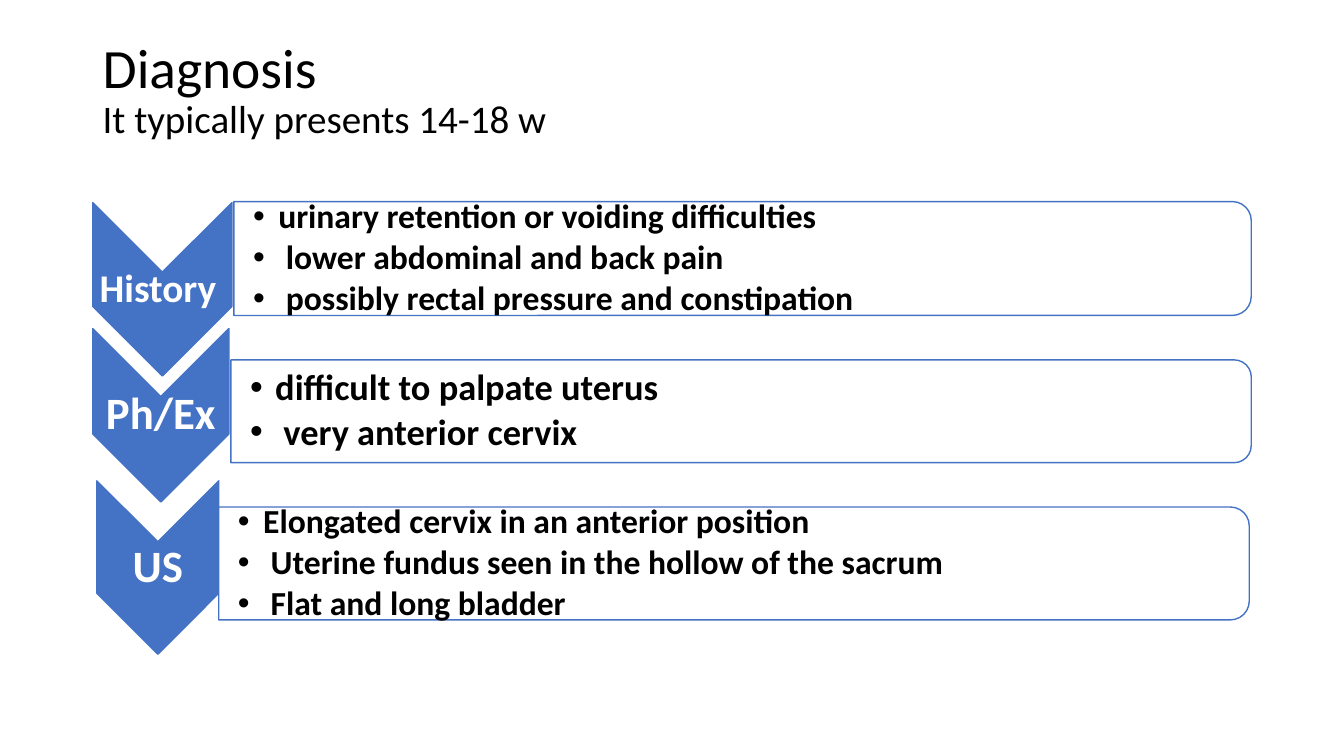
import pptx
import pptx.util
import pptx.dml.color
import pptx.enum.shapes
import pptx.enum.text
from lxml import etree
from pptx.oxml.ns import qn
from pptx.util import Inches, Pt

FONT = "Calibri"
BLUE, WHITE, BLACK = "4472C4", "FFFFFF", "000000"
CHEVRON_HEIGHT = 1.72
PANEL_MARGIN = 0.05

TITLE = [("Diagnosis", 39.6), ("It typically presents 14-18 w", 27.9)]
# Boxes: chevron is left, top, width; panel is left, top, width, height
STEPS = [
    {"label": "History ", "label_size": 28, "chevron": (0.92, 2.01, 1.38),
     "panel": (2.32, 2.0, 10.09, 1.13), "size": 24,
     "findings": ["urinary retention or voiding difficulties",
                  " lower abdominal and back pain",
                  " possibly rectal pressure and constipation"]},
    {"label": "Ph/Ex", "label_size": 32, "chevron": (0.92, 3.26, 1.35),
     "panel": (2.29, 3.57, 10.12, 1.02), "size": 26,
     "findings": ["difficult to palpate uterus", " very anterior cervix"]},
    {"label": "US", "label_size": 32, "chevron": (0.96, 4.77, 1.21),
     "panel": (2.17, 5.03, 10.22, 1.12), "size": 24,
     "findings": ["Elongated cervix in an anterior position",
                  " Uterine fundus seen in the hollow of the sacrum",
                  " Flat and long bladder"]},
]


def color(hex_string):
    return pptx.dml.color.RGBColor.from_string(hex_string)


def add_turned_shape(slide, kind, box, fill):
    """Add a shape turned by 90 degrees that covers the given box once turned."""
    left, top, width, height = box
    shift = (width - height) / 2
    shape = slide.shapes.add_shape(kind, Inches(left + shift), Inches(top - shift),
                                   Inches(height), Inches(width))
    shape.rotation = 90
    shape.shadow.inherit = False
    shape.fill.solid()
    shape.fill.fore_color.rgb = color(fill)
    shape.line.color.rgb = color(BLUE)
    shape.line.width = Pt(1)


def add_text_frame(slide, box, anchor, left_inset, inset):
    text_box = slide.shapes.add_textbox(*map(Inches, box))
    frame = text_box.text_frame
    frame.word_wrap = True
    frame.vertical_anchor = anchor
    frame.margin_left = Inches(left_inset)
    frame.margin_top = frame.margin_right = frame.margin_bottom = Inches(inset)
    return frame


def style_paragraph(paragraph, size, hex_string):
    paragraph.line_spacing = 0.9
    paragraph.font.name = FONT
    paragraph.font.size = Pt(size)
    paragraph.font.bold = True
    paragraph.font.color.rgb = color(hex_string)


def add_bullet(paragraph):
    properties = paragraph._p.get_or_add_pPr()
    properties.set("marL", str(Inches(0.25)))
    properties.set("indent", str(Inches(-0.25)))
    bullet_font = etree.Element(qn("a:buFont"), typeface="Arial")
    bullet = etree.Element(qn("a:buChar"), char="•")
    default_run = properties.find(qn("a:defRPr"))
    default_run.addprevious(bullet_font)
    default_run.addprevious(bullet)


def add_title(slide):
    frame = add_text_frame(slide, (0.92, 0.4, 11.5, 1.45),
                           pptx.enum.text.MSO_ANCHOR.TOP, 0.1, 0)
    paragraph = frame.paragraphs[0]
    paragraph.line_spacing = 0.9
    for index, (text, size) in enumerate(TITLE):
        if index:
            paragraph.add_line_break()
        run = paragraph.add_run()
        run.text = text
        run.font.name = FONT
        run.font.size = Pt(size)
        run.font.color.rgb = color(BLACK)


def add_step(slide, step):
    shapes = pptx.enum.shapes.MSO_SHAPE
    middle = pptx.enum.text.MSO_ANCHOR.MIDDLE

    left, top, width = step["chevron"]
    add_turned_shape(slide, shapes.CHEVRON, (left, top, width, CHEVRON_HEIGHT), BLUE)
    label_box = (left, top + width / 2, width, CHEVRON_HEIGHT - width)
    label = add_text_frame(slide, label_box, middle, 0.02, 0.02).paragraphs[0]
    label.text = step["label"]
    label.alignment = pptx.enum.text.PP_ALIGN.CENTER
    style_paragraph(label, step["label_size"], WHITE)

    left, top, width, height = step["panel"]
    add_turned_shape(slide, shapes.ROUND_2_SAME_RECTANGLE, step["panel"], WHITE)
    findings_box = (left, top + PANEL_MARGIN, width - PANEL_MARGIN,
                    height - 2 * PANEL_MARGIN)
    frame = add_text_frame(slide, findings_box, middle, 0.19, 0.02)
    for index, finding in enumerate(step["findings"]):
        paragraph = frame.add_paragraph() if index else frame.paragraphs[0]
        paragraph.text = finding
        paragraph.space_after = Pt(round(step["size"] * 0.14, 1))
        style_paragraph(paragraph, step["size"], BLACK)
        add_bullet(paragraph)


def main():
    presentation = pptx.Presentation()
    presentation.slide_width = Inches(13.33)
    presentation.slide_height = Inches(7.5)
    slide = presentation.slides.add_slide(presentation.slide_layouts[6])
    add_title(slide)
    for step in STEPS:
        add_step(slide, step)
    presentation.save("out.pptx")


if __name__ == "__main__":
    main()
